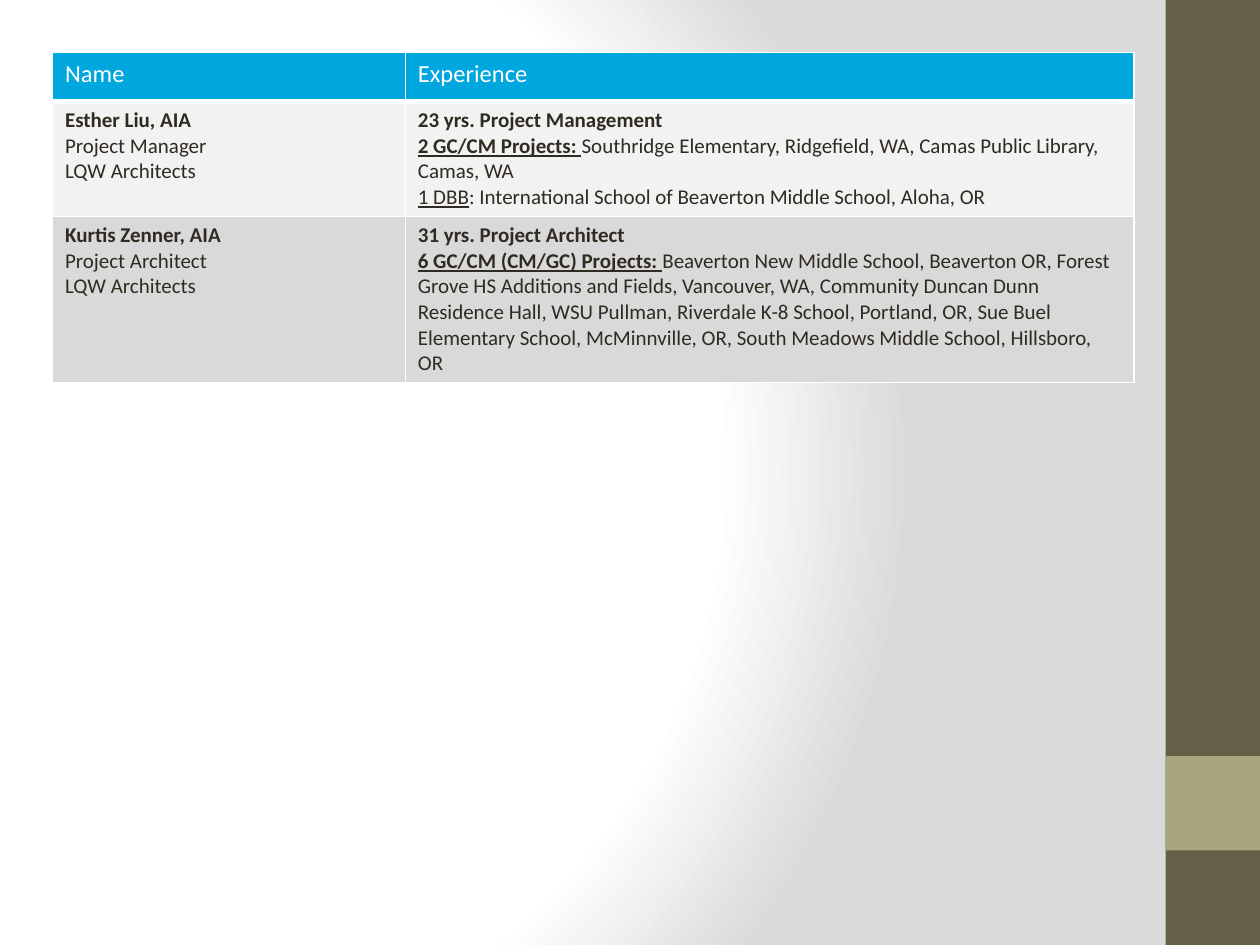
import pptx
import pptx.util
import pptx.dml.color
import pptx.enum.shapes
import pptx.oxml
import pptx.oxml.ns
from dataclasses import dataclass

Pt = pptx.util.Pt


@dataclass(frozen=True)
class Theme:
    font: str = "Calibri"
    head: int = 14
    body: int = 12
    white: str = "FFFFFF"
    grey: str = "DADADA"
    ink: str = "2F2B20"
    blue: str = "00A6DE"
    brown: str = "675E47"
    olive: str = "A9A57C"
    bands: tuple = ("F2F2F2", "D9D9D9")


THEME = Theme()
FIRM = "LQW Architects"

# Each cell is a list of paragraphs, each paragraph a list of (text, style);
# style letters: b = bold, u = underline
HEADS = ["Name", "Experience"]
STAFF = [
    (
        [[("Esther Liu, AIA", "b")], [("Project Manager", "")], [(FIRM, "")]],
        [
            [("23 yrs. Project Management", "b")],
            [("2 GC/CM Projects: ", "bu"),
             ("Southridge Elementary, Ridgefield, WA, Camas Public Library, "
              "Camas, WA", "")],
            [("1 DBB", "u"),
             (": International School of Beaverton Middle School, Aloha, OR", "")],
        ],
    ),
    (
        [[("Kurtis Zenner, AIA", "b")], [("Project Architect", "")], [(FIRM, "")]],
        [
            [("31 yrs. Project Architect", "b")],
            [("6 GC/CM (CM/GC) Projects: ", "bu"),
             ("Beaverton New Middle School, Beaverton OR, Forest Grove HS "
              "Additions and Fields, Vancouver, WA, Community Duncan Dunn "
              "Residence Hall, WSU Pullman, Riverdale K-8 School, Portland, OR, "
              "Sue Buel Elementary School, McMinnville, OR, South Meadows Middle "
              "School, Hillsboro, OR", "")],
        ],
    ),
]


def color(code):
    return pptx.dml.color.RGBColor.from_string(code)


def paint(fill, code):
    fill.solid()
    fill.fore_color.rgb = color(code)


def backdrop(slide):
    """Radial fade from white to grey, centred left of the middle."""
    fill = slide.background.fill
    fill.gradient()
    grad = slide.element.find(".//" + pptx.oxml.ns.qn("a:gradFill"))
    stops = [(0, THEME.white), (75, THEME.white), (100, THEME.grey)]
    marks = "".join(
        f'<a:gs pos="{pos * 1000}"><a:srgbClr val="{code}"/></a:gs>'
        for pos, code in stops
    )
    fresh = pptx.oxml.parse_xml(
        f'<a:gradFill {pptx.oxml.ns.nsdecls("a")} rotWithShape="1">'
        f"<a:gsLst>{marks}</a:gsLst>"
        '<a:path path="circle"><a:fillToRect l="20000" t="50000" '
        'r="100000" b="50000"/></a:path></a:gradFill>'
    )
    grad.getparent().replace(grad, fresh)


def block(slide, x, y, w, h, code):
    shape = slide.shapes.add_shape(
        pptx.enum.shapes.MSO_SHAPE.RECTANGLE, Pt(x), Pt(y), Pt(w), Pt(h)
    )
    shape.shadow.inherit = False
    paint(shape.fill, code)
    shape.line.fill.background()


def side(slide, x, y, w, h):
    """Brown side bar with a square olive accent one width above its foot."""
    block(slide, x, y, w, h, THEME.brown)
    block(slide, x, y + h - 2 * w, w, w, THEME.olive)


def border(cell, foot):
    """White lines on all sides; foot is the width of the bottom one."""
    props = cell._tc.get_or_add_tcPr()
    for edge, width in (("L", 1), ("R", 1), ("T", 1), ("B", foot)):
        props.append(pptx.oxml.parse_xml(
            f'<a:ln{edge} {pptx.oxml.ns.nsdecls("a")} w="{Pt(width)}">'
            f'<a:solidFill><a:srgbClr val="{THEME.white}"/></a:solidFill>'
            f"</a:ln{edge}>"
        ))


def write(cell, paras, size, code):
    frame = cell.text_frame
    for i, parts in enumerate(paras):
        para = frame.add_paragraph() if i else frame.paragraphs[0]
        for text, style in parts:
            run = para.add_run()
            run.text = text
            font = run.font
            font.name, font.size = THEME.font, Pt(size)
            font.bold, font.underline = "b" in style, "u" in style
            font.color.rgb = color(code)


def roster(slide, x, y, w, h):
    """Staff table: a blue heading row, then one banded row per person."""
    rows = [[[[(head, "")]] for head in HEADS], *STAFF]
    table = slide.shapes.add_table(
        len(rows), len(HEADS), Pt(x), Pt(y), Pt(w), Pt(h)
    ).table
    table.horz_banding = False
    left = 201.6
    for col, width in zip(table.columns, (left, w - left)):
        col.width = Pt(width)
    for row, height in zip(table.rows, (28, 56, 72)):
        row.height = Pt(height)

    for r, cells in enumerate(rows):
        top = r == 0
        back = THEME.blue if top else THEME.bands[(r - 1) % 2]
        size, ink = (THEME.head, THEME.white) if top else (THEME.body, THEME.ink)
        for c, paras in enumerate(cells):
            cell = table.cell(r, c)
            border(cell, 3 if top else 1)
            paint(cell.fill, back)
            write(cell, paras, size, ink)


def main():
    deck = pptx.Presentation()
    deck.slide_width, deck.slide_height = Pt(720), Pt(540)
    slide = deck.slides.add_slide(deck.slide_layouts[6])
    backdrop(slide)
    side(slide, 666, 0, 54, 540)
    roster(slide, 30, 30, 618, 156)
    deck.save("out.pptx")


if __name__ == "__main__":
    main()
